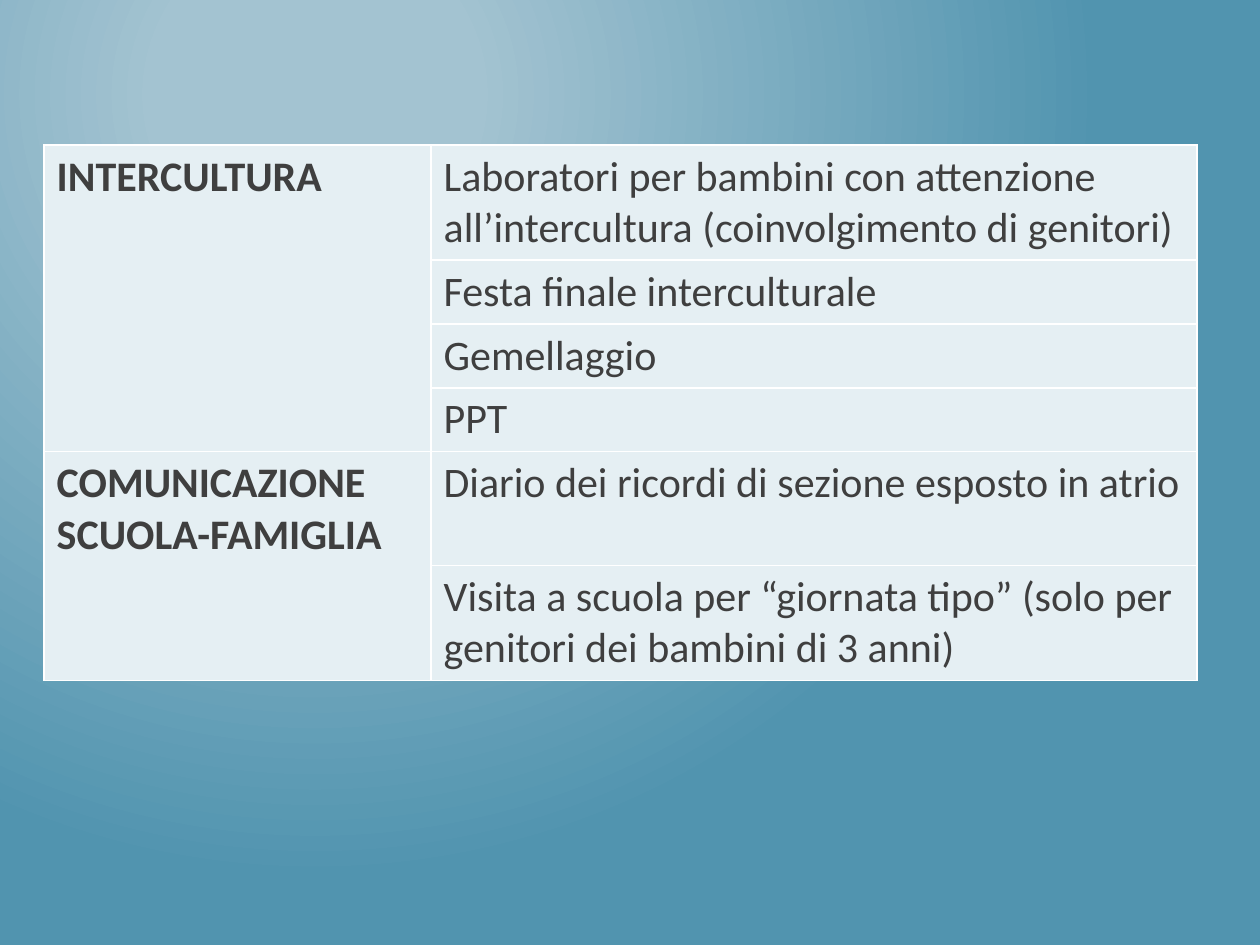
"""Build a slide with a table of school activities grouped by theme."""
import lxml.etree
import pptx
import pptx.dml.color
import pptx.oxml.ns
import pptx.util
from pptx.util import Cm, Pt

COLORS = {
    "glow": "A3C3D1",
    "background": "5194AF",
    "cell": "E5EFF3",
    "border": "FFFFFF",
    "text": "3F3F3F",
}
SINGLE, DOUBLE = 1.27, 2.29
THEMES = [
    ("INTERCULTURA", [
        ("Laboratori per bambini con attenzione all’intercultura (coinvolgimento di genitori)", DOUBLE),
        ("Festa finale interculturale", SINGLE),
        ("Gemellaggio", SINGLE),
        ("PPT", SINGLE),
    ]),
    ("COMUNICAZIONE SCUOLA-FAMIGLIA", [
        ("Diario dei ricordi di sezione esposto in atrio", DOUBLE),
        ("Visita a scuola per “giornata tipo” (solo per genitori dei bambini di 3 anni)", DOUBLE),
    ]),
]
COLUMN_WIDTHS = [7.8, 15.44]
TABLE_LEFT, TABLE_TOP = 0.89, 2.92


def rgb(name):
    return pptx.dml.color.RGBColor.from_string(COLORS[name])


def add_element(parent, tag, **attributes):
    return lxml.etree.SubElement(parent, pptx.oxml.ns.qn(tag), attributes)


def paint_background(slide):
    fill = slide.background.fill
    fill.gradient()
    for stop, name, position in zip(fill.gradient_stops, ("glow", "background"), (0.2, 1)):
        stop.color.rgb = rgb(name)
        stop.position = position
    gradient = next(slide.element.iter(pptx.oxml.ns.qn("a:gradFill")))
    gradient.remove(gradient.find(pptx.oxml.ns.qn("a:lin")))
    circle = add_element(gradient, "a:path", path="circle")
    add_element(circle, "a:fillToRect", l="50000", t="20000", r="100000", b="100000")


def style_cell(cell):
    properties = cell._tc.get_or_add_tcPr()
    for side in ("a:lnL", "a:lnR", "a:lnT", "a:lnB"):
        line = add_element(properties, side, w=str(Pt(1)))
        add_element(add_element(line, "a:solidFill"), "a:srgbClr", val=COLORS["border"])
    cell.fill.solid()
    cell.fill.fore_color.rgb = rgb("cell")


def write_cell(cell, text, bold):
    cell.text = text
    font = cell.text_frame.paragraphs[0].font
    font.name = "Calibri"
    font.size = Pt(24)
    font.bold = bold
    font.color.rgb = rgb("text")


def add_activity_table(slide):
    heights = [height for _, activities in THEMES for _, height in activities]
    frame = slide.shapes.add_table(
        len(heights), len(COLUMN_WIDTHS), Cm(TABLE_LEFT), Cm(TABLE_TOP),
        Cm(sum(COLUMN_WIDTHS)), Cm(sum(heights)))
    table = frame.table
    table.first_row = table.horz_banding = False
    for column, width in zip(table.columns, COLUMN_WIDTHS):
        column.width = Cm(width)
    for row, height in zip(table.rows, heights):
        row.height = Cm(height)
    for cell in table.iter_cells():
        style_cell(cell)

    first = 0
    for theme, activities in THEMES:
        last = first + len(activities) - 1
        table.cell(first, 0).merge(table.cell(last, 0))
        write_cell(table.cell(first, 0), theme, True)
        for index, (activity, _) in enumerate(activities, first):
            write_cell(table.cell(index, 1), activity, False)
        first = last + 1


def main():
    presentation = pptx.Presentation()
    presentation.slide_width = Cm(25.4)
    presentation.slide_height = Cm(19.05)
    slide = presentation.slides.add_slide(presentation.slide_layouts[6])
    paint_background(slide)
    add_activity_table(slide)
    presentation.save("out.pptx")


if __name__ == "__main__":
    main()
